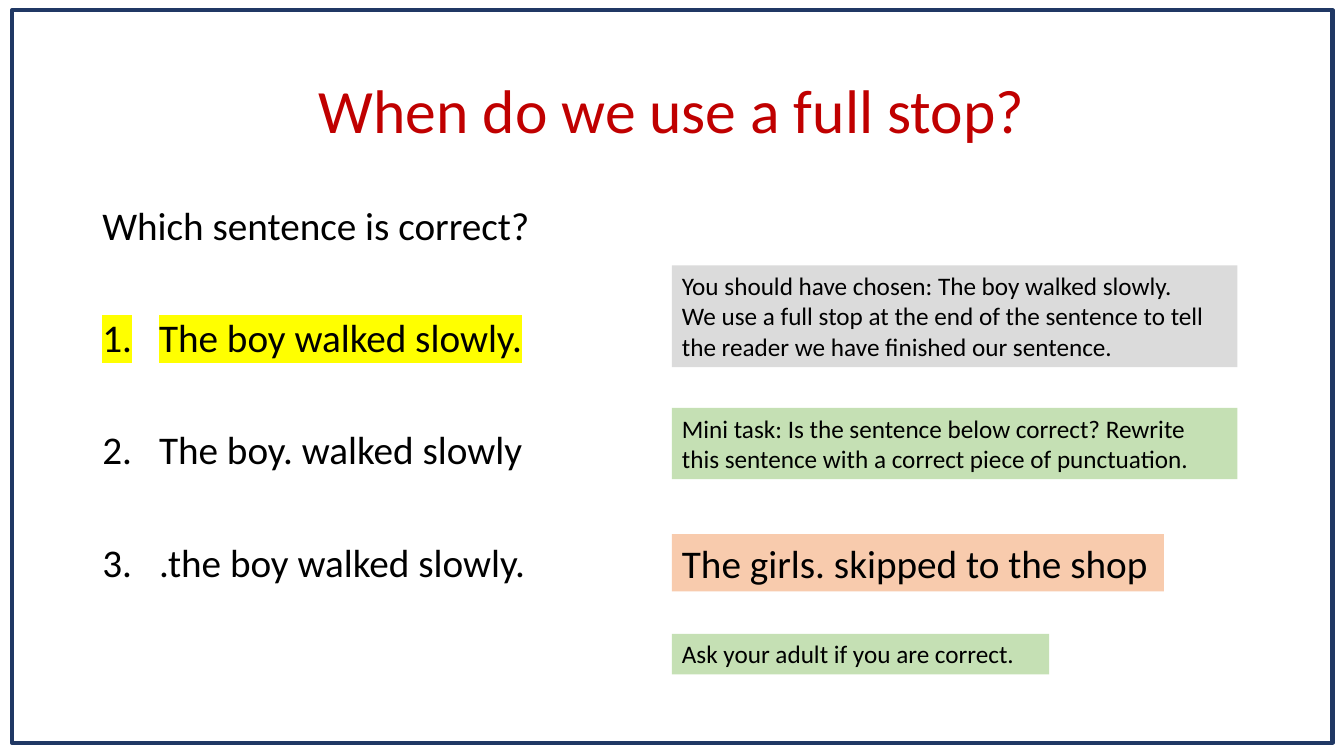
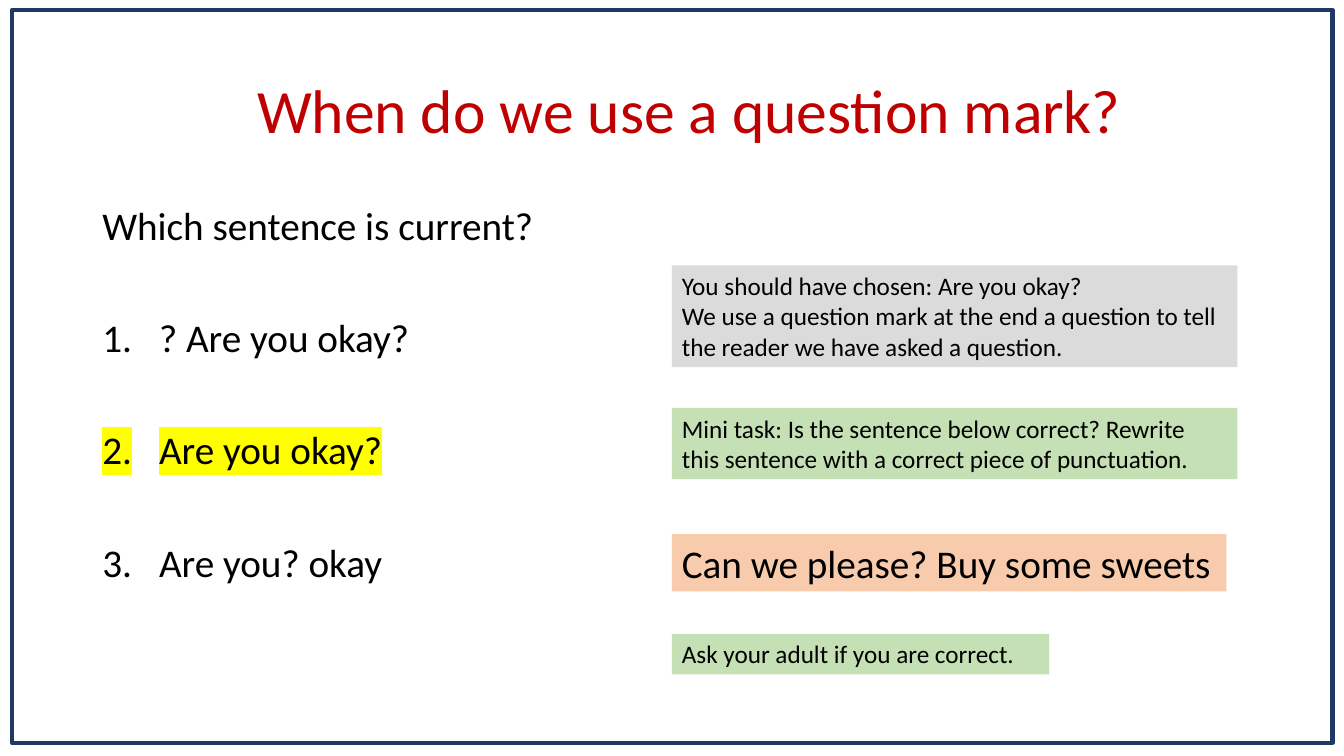
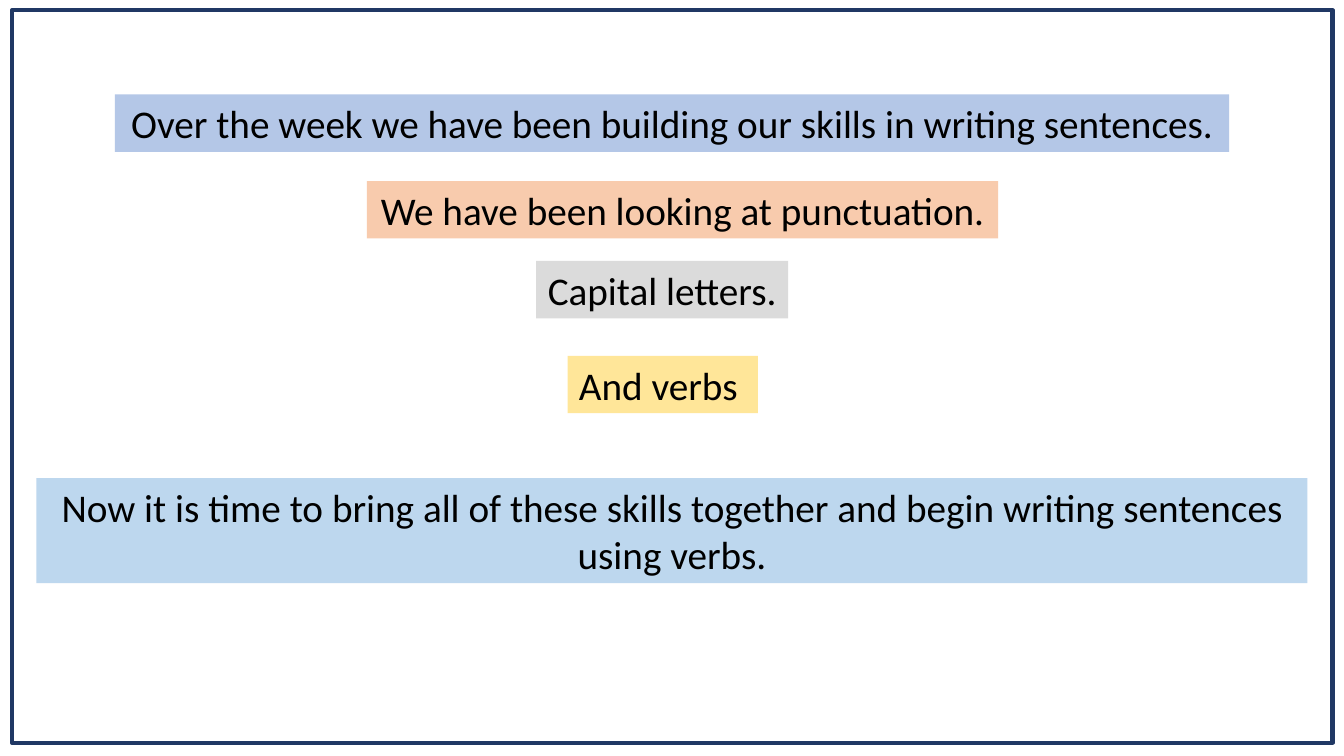
"""Build three punctuation lesson slides: two quizzes and a summary."""
from lxml import etree
from pptx import Presentation
from pptx.dml.color import RGBColor
from pptx.enum.shapes import MSO_SHAPE
from pptx.enum.text import MSO_ANCHOR, PP_ALIGN
from pptx.oxml.ns import qn
from pptx.util import Pt

RECT = MSO_SHAPE.RECTANGLE
TOP, MIDDLE = MSO_ANCHOR.TOP, MSO_ANCHOR.MIDDLE
LEFT, CENTER = PP_ALIGN.LEFT, PP_ALIGN.CENTER

BLACK = RGBColor(0x00, 0x00, 0x00)
RED = RGBColor(0xC0, 0x00, 0x00)
NAVY = RGBColor(0x20, 0x38, 0x64)
GREY = RGBColor(0xDB, 0xDB, 0xDB)
GREEN = RGBColor(0xC5, 0xE0, 0xB4)
PEACH = RGBColor(0xF8, 0xCB, 0xAD)
PERIWINKLE = RGBColor(0xB4, 0xC7, 0xE7)
GOLD = RGBColor(0xFF, 0xE6, 0x99)
SKY = RGBColor(0xBD, 0xD7, 0xEE)
YELLOW = RGBColor(0xFF, 0xFF, 0x00)

FONT = "Calibri"
TITLE, BODY, NOTE = 44, 28, 18
SLIDE_W, SLIDE_H = 960, 540
FRAME = (8.6, 7.3, 943.2, 523.2)
MARGIN, NOTE_X, NOTE_W = 66, 480, 404
LINE_H = 41
INDENT = 40.5

MINI_TASK = ("Mini task: Is the sentence below correct? Rewrite this sentence "
             "with a correct piece of punctuation.")
ASK = "Ask your adult if you are correct."

QUIZZES = [
    {"title": "When do we use a full stop?", "title_w": 828,
     "question": "Which sentence is correct?",
     "options": ["The boy walked slowly.", "The boy. walked slowly",
                 ".the boy walked slowly."],
     "answer": 0,
     "why": ["You should have chosen: The boy walked slowly.",
             "We use a full stop at the end of the sentence to tell the reader "
             "we have finished our sentence."],
     "task": "The girls. skipped to the shop", "task_w": 351.4},
    {"title": "When do we use a question mark?", "title_w": 853,
     "question": "Which sentence is current?",
     "options": ["? Are you okay?", "Are you okay?", "Are you? okay"],
     "answer": 1,
     "why": ["You should have chosen: Are you okay?",
             "We use a question mark at the end a question to tell the reader "
             "we have asked a question."],
     "task": "Can we please? Buy some sweets", "task_w": 396},
]

SUMMARY = [
    ("Over the week we have been building our skills in writing sentences.",
     PERIWINKLE, (82, 67.5, 796, LINE_H), False),
    ("We have been looking at punctuation.",
     PEACH, (262, 129.4, 451, LINE_H), False),
    ("Capital letters.", GREY, (383, 186.4, 180, LINE_H), False),
    ("And verbs ", GOLD, (405.4, 254.2, 136, LINE_H), False),
    ("Now it is time to bring all of these skills together and begin writing "
     "sentences using verbs.", SKY, (26, 341.5, 908, 75), True),
]


def apply(obj, formats):
    for name, value in formats.items():
        setattr(obj, name, value)


def new_slide(prs):
    s = prs.slides.add_slide(prs.slide_layouts[6])
    sp = s.shapes.add_shape(RECT, *map(Pt, FRAME))
    sp.shadow.inherit = False
    sp.fill.background()
    sp.line.color.rgb = NAVY
    sp.line.width = Pt(3)
    return s


def write(s, lines, box, size, color=BLACK, fill=None, align=LEFT,
          anchor=TOP, wrap=True, spacing=1.0):
    sp = s.shapes.add_textbox(*map(Pt, box))
    if fill is not None:
        sp.fill.solid()
        sp.fill.fore_color.rgb = fill
    tf = sp.text_frame
    apply(tf, {"word_wrap": wrap, "vertical_anchor": anchor})
    for i, line in enumerate(lines):
        p = tf.add_paragraph() if i else tf.paragraphs[0]
        apply(p, {"alignment": align, "line_spacing": spacing})
        r = p.add_run()
        r.text = line
        apply(r.font, {"size": Pt(size), "name": FONT})
        r.font.color.rgb = color
    return tf


def number(p):
    pPr = p._p.get_or_add_pPr()
    pPr.set("marL", str(Pt(INDENT)))
    pPr.set("indent", str(-Pt(INDENT)))
    etree.SubElement(pPr, qn("a:buFont"), typeface="+mj-lt")
    etree.SubElement(pPr, qn("a:buAutoNum"), type="arabicPeriod")


def highlight(r, color):
    mark = etree.Element(qn("a:highlight"))
    etree.SubElement(mark, qn("a:srgbClr"), val=str(color))
    r._r.rPr.find(qn("a:latin")).addprevious(mark)


def quiz_slide(prs, quiz):
    s = new_slide(prs)
    write(s, [quiz["title"]], (MARGIN, 28.75, quiz["title_w"], 104.4), TITLE,
          color=RED, align=CENTER, anchor=MIDDLE, spacing=0.9)
    tf = write(s, [quiz["question"], *quiz["options"]],
               (MARGIN, 143.75, 414, 320), BODY, spacing=0.9)
    options = tf.paragraphs[1:]
    for p in options:
        p.space_before = Pt(50)
        number(p)
    highlight(options[quiz["answer"]].runs[0], YELLOW)
    notes = [
        (quiz["why"], GREY, 189.6, NOTE_W, 72.7, NOTE),
        ([MINI_TASK], GREEN, 291.4, NOTE_W, 50.9, NOTE),
        ([quiz["task"]], PEACH, 381.5, quiz["task_w"], LINE_H, BODY),
        ([ASK], GREEN, 452.7, 269.4, 29, NOTE),
    ]
    for lines, fill, y, w, h, size in notes:
        write(s, lines, (NOTE_X, y, w, h), size, fill=fill)


def summary_slide(prs):
    s = new_slide(prs)
    for text, fill, box, wrap in SUMMARY:
        write(s, [text], box, BODY, fill=fill, align=CENTER, wrap=wrap)


def main():
    prs = Presentation()
    apply(prs, {"slide_width": Pt(SLIDE_W), "slide_height": Pt(SLIDE_H)})
    for quiz in QUIZZES:
        quiz_slide(prs, quiz)
    summary_slide(prs)
    prs.save("out.pptx")


if __name__ == "__main__":
    main()
